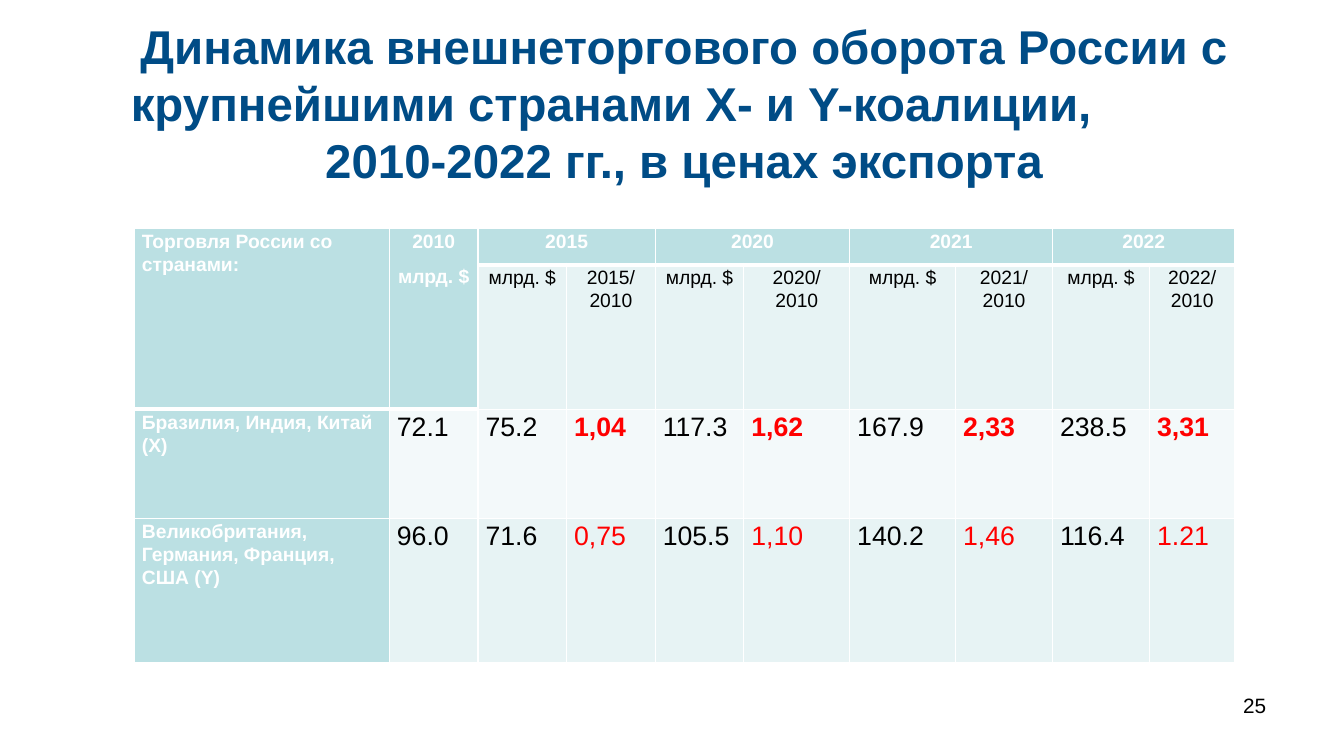
from lxml import etree
from pptx import Presentation
from pptx.dml.color import RGBColor
from pptx.enum.text import MSO_ANCHOR, PP_ALIGN
from pptx.oxml.ns import qn
from pptx.util import Cm, Pt

LEFT, CENTER, RIGHT = PP_ALIGN.LEFT, PP_ALIGN.CENTER, PP_ALIGN.RIGHT
TOP, MIDDLE = MSO_ANCHOR.TOP, MSO_ANCHOR.MIDDLE
TITLE_ONLY = 5
FONT = "Arial"
COLORS = {
    "title": "004C86", "text": "000000", "ratio": "FF0000", "white": "FFFFFF",
    "header": "BBE0E3", "band": "E7F3F4", "light": "F3F9FA",
}

TITLE_LINES = [
    ("Динамика внешнеторгового оборота России с", 0),
    ("крупнейшими странами Х- и Y-коалиции,", 3.47),
    ("2010-2022 гг., в ценах экспорта", 0),
]
YEARS = ["2015", "2020", "2021", "2022"]
UNIT = "млрд. $"
COUNTRIES = [
    ("Бразилия, Индия, Китай (X)", "light", True,
     ["72.1", "75.2", "1,04", "117.3", "1,62", "167.9", "2,33", "238.5", "3,31"]),
    ("Великобритания, Германия, Франция, США (Y)", "band", False,
     ["96.0", "71.6", "0,75", "105.5", "1,10", "140.2", "1,46", "116.4", "1.21"]),
]
COLUMN_WIDTHS = [6.07, 2.11, 2.11, 2.11, 2.11, 2.52, 2.52, 2.31, 2.31, 2.03]
ROW_HEIGHTS = [0.86, 3.45, 2.59, 3.45]


def color(name):
    return RGBColor.from_string(COLORS[name])


def style_para(para, size, color_name, bold=False, align=LEFT):
    para.alignment = align
    para.font.name = FONT
    para.font.size = Pt(size)
    para.font.bold = bold
    para.font.color.rgb = color(color_name)


def set_borders(cell, bottom=1, top=1):
    properties = cell._tc.get_or_add_tcPr()
    widths = {"a:lnL": 1, "a:lnR": 1, "a:lnT": top, "a:lnB": bottom}
    for position, (tag, width) in enumerate(widths.items()):
        line = etree.Element(qn(tag), w=str(Pt(width)))
        fill = etree.SubElement(line, qn("a:solidFill"))
        etree.SubElement(fill, qn("a:srgbClr"), val=COLORS["white"])
        properties.insert(position, line)


def fill_cell(cell, lines, fill, size=13, color_name="white", bold=True, align=LEFT):
    cell.fill.solid()
    cell.fill.fore_color.rgb = color(fill)
    cell.margin_left = cell.margin_right = Cm(0.18)
    cell.margin_top, cell.margin_bottom = Cm(0.03), Cm(0)
    cell.vertical_anchor = TOP
    cell.text = "\n".join(lines)
    for para in cell.text_frame.paragraphs:
        style_para(para, size, color_name, bold, align)
        para.line_spacing = 1.07
        para.space_after = Pt(8)


def add_title(page, left, top, width, height):
    title = page.shapes.title
    title.left, title.top, title.width, title.height = left, top, width, height
    frame = title.text_frame
    frame.word_wrap = True
    frame.vertical_anchor = MIDDLE
    frame.text = "\n".join(text for text, _ in TITLE_LINES)
    for para, (_, right_indent) in zip(frame.paragraphs, TITLE_LINES):
        style_para(para, 32, "title", True, CENTER)
        para.line_spacing = Pt(38.5)
        para.space_before = Pt(0)
        para._p.get_or_add_pPr().set("marR", str(Cm(right_indent)))


def add_trade_table(page, left, top, width, height):
    table = page.shapes.add_table(
        len(ROW_HEIGHTS), len(COLUMN_WIDTHS), left, top, width, height).table
    table.first_row = table.horz_banding = False
    for column, share in zip(table.columns, COLUMN_WIDTHS):
        column.width = int(width * share / sum(COLUMN_WIDTHS))
    for row, share in zip(table.rows, ROW_HEIGHTS):
        row.height = int(height * share / sum(ROW_HEIGHTS))

    for column in (0, 1):
        table.cell(0, column).merge(table.cell(1, column))
    fill_cell(table.cell(0, 0), ["Торговля России со странами:"], "header")
    fill_cell(table.cell(0, 1), ["2010", UNIT], "header", align=CENTER)
    for index, year in enumerate(YEARS):
        column = 2 + 2 * index
        table.cell(0, column).merge(table.cell(0, column + 1))
        fill_cell(table.cell(0, column), [year], "header", align=CENTER)
        for offset, label in enumerate([UNIT, f"{year}/ 2010"]):
            fill_cell(table.cell(1, column + offset), [label], "band",
                      color_name="text", bold=False, align=CENTER)

    for row, (name, fill, bold_ratio, values) in enumerate(COUNTRIES, 2):
        fill_cell(table.cell(row, 0), [name], "header")
        for column, value in enumerate(values, 1):
            is_ratio = column > 1 and column % 2 == 1
            fill_cell(table.cell(row, column), [value], fill, 18,
                      "ratio" if is_ratio else "text", is_ratio and bold_ratio)

    for row in range(len(ROW_HEIGHTS)):
        for column in range(len(COLUMN_WIDTHS)):
            header_row = 1 if column < 2 else 0
            bottom = 3 if row == header_row or (row == 0 and column < 2) else 1
            top_width = 3 if row == header_row + 1 else 1
            set_borders(table.cell(row, column), bottom, top_width)


def add_page_number(page, left, top, width, height):
    box = page.shapes.add_textbox(left, top, width, height)
    box.text_frame.word_wrap = True
    box.text_frame.text = "25"
    style_para(box.text_frame.paragraphs[0], 14, "text", align=RIGHT)


def main():
    deck = Presentation()
    deck.slide_width, deck.slide_height = Cm(32), Cm(18)
    page = deck.slides.add_slide(deck.slide_layouts[TITLE_ONLY])
    add_title(page, Cm(2), Cm(0.84), Cm(28.6), Cm(3.2))
    add_trade_table(page, Cm(3.2), Cm(5.44), Cm(26.2), Cm(10.35))
    add_page_number(page, Cm(22.94), Cm(16.38), Cm(7.46), Cm(1.24))
    deck.save("out.pptx")


if __name__ == "__main__":
    main()
